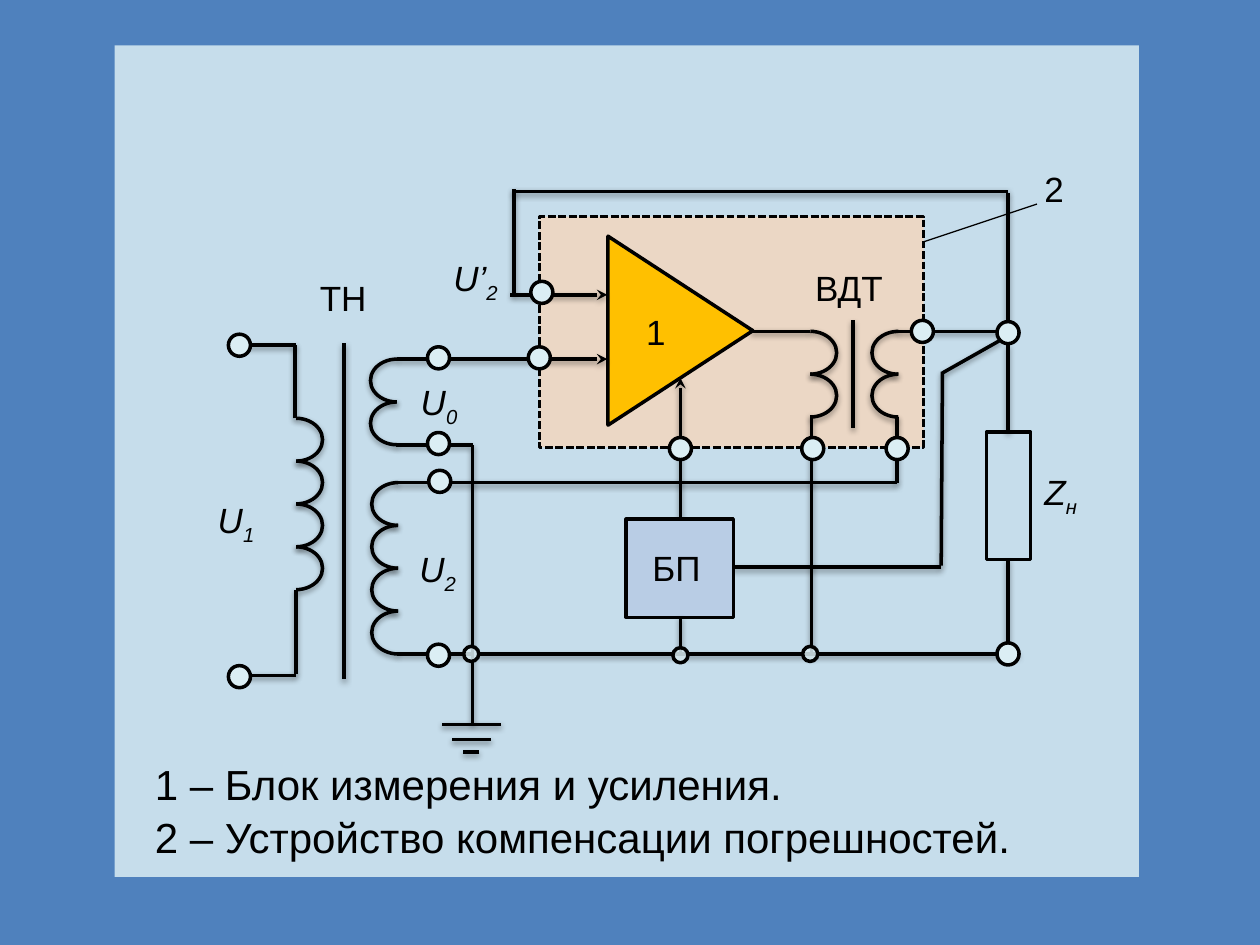
from dataclasses import dataclass
from typing import Any

from lxml.etree import SubElement
from pptx import Presentation
from pptx.dml.color import RGBColor
from pptx.enum.dml import MSO_LINE_DASH_STYLE as Dash
from pptx.enum.shapes import MSO_CONNECTOR_TYPE as Link, MSO_SHAPE as Kind
from pptx.enum.text import MSO_ANCHOR as Anchor, PP_ALIGN as Align
from pptx.oxml.ns import qn
from pptx.util import Inches, Pt

BLACK = RGBColor(0x00, 0x00, 0x00)
BLUE = RGBColor(0x4F, 0x81, 0xBD)
PALE = RGBColor(0xDB, 0xEE, 0xF4)
PEACH = RGBColor(0xFC, 0xD5, 0xB5)
AMBER = RGBColor(0xFF, 0xC0, 0x00)
STEEL = RGBColor(0xB9, 0xCD, 0xE5)

CELL = 0.1  # grid step in inches
TURN = 3.4  # height of one coil turn, in cells
BULGE = 4.2  # full width of one coil turn, in cells


def set_shadow(item, visible):
    """Give the item a soft drop shadow, or an empty effect list."""
    effects = SubElement(item._element.spPr, qn("a:effectLst"))
    if visible:
        shadow = SubElement(effects, qn("a:outerShdw"), blurRad="40000",
                            dist="20000", dir="5400000", rotWithShape="0")
        color = SubElement(shadow, qn("a:srgbClr"), val=str(BLACK))
        SubElement(color, qn("a:alpha"), val="38000")


@dataclass
class Region:
    """Part of the circuit; all lengths are cells from its top left corner."""
    shapes: Any
    left: float
    top: float

    def frame(self, x, y, width, height):
        return (Inches(self.left + x * CELL), Inches(self.top + y * CELL),
                Inches(width * CELL), Inches(height * CELL))

    def block(self, kind, place, fill=None, line=2, opacity=100):
        shape = self.shapes.add_shape(kind, *self.frame(*place))
        if fill is None:
            shape.fill.background()
        else:
            shape.fill.solid()
            shape.fill.fore_color.rgb = fill
            if opacity < 100:
                color = shape._element.spPr.find(".//" + qn("a:srgbClr"))
                SubElement(color, qn("a:alpha"), val=str(opacity * 1000))
        if line:
            shape.line.color.rgb = BLACK
            shape.line.width = Pt(line)
        else:
            shape.line.fill.background()
        return shape

    def plain(self, *args, **options):
        shape = self.block(*args, **options)
        shape.shadow.inherit = False
        return shape

    def wire(self, x1, y1, x2, y2, arrow=False, width=2, shadow=True):
        start, end = self.frame(x1, y1, 0, 0), self.frame(x2, y2, 0, 0)
        wire = self.shapes.add_connector(Link.STRAIGHT, *start[:2], *end[:2])
        wire.line.color.rgb = BLACK
        wire.line.width = Pt(width)
        if arrow:
            SubElement(wire.line._get_or_add_ln(), qn("a:tailEnd"), type="stealth")
        set_shadow(wire, shadow)

    def wires(self, *ends):
        for points in ends:
            self.wire(*points)

    def coil(self, x, y, turns, rotation):
        """Stack half circles on the axis x; y is the first turn's centre."""
        for turn in range(turns):
            place = (x - TURN / 2, y + turn * TURN - BULGE / 2, TURN, BULGE)
            arc = self.block(Kind.ARC, place)
            arc.adjustments[0] = 108.183
            arc.adjustments[1] = 0
            arc.rotation = rotation
            set_shadow(arc, True)

    def nodes(self, *centres, size=1.75, opacity=100):
        for x, y in centres:
            place = (x - size / 2, y - size / 2, size, size)
            self.plain(Kind.OVAL, place, PALE, opacity=opacity)

    def joints(self, *centres):
        self.nodes(*centres, size=1.2, opacity=85)

    def label(self, place, *lines, sub="", italic=False, size=20):
        box = self.shapes.add_textbox(*self.frame(*place))
        frame = box.text_frame
        frame.word_wrap = True
        frame.vertical_anchor = Anchor.TOP
        for index, line in enumerate(lines):
            para = frame.add_paragraph() if index else frame.paragraphs[0]
            para.alignment = Align.LEFT
            para.line_spacing = 1.05
            for text in filter(None, (line, sub)):
                span = para.add_run()
                span.text = text
                span.font.name = "Arial"
                span.font.size = Pt(size)
                span.font.italic = italic
                span.font.color.rgb = BLACK
                if text is sub:
                    span.font._element.set("baseline", "-25000")


def draw_panel(area):
    area.plain(Kind.RECTANGLE, (0, 0, 81.3, 66), PALE, line=0, opacity=85)
    area.label((2.2, 55.9, 77.8, 11.7), "1 – Блок измерения и усиления.",
               "2 – Устройство компенсации погрешностей.", size=24)


def draw_compensator(area):
    case = area.plain(Kind.RECTANGLE, (0, 0, 30.5, 18.3), PEACH, line=1.5, opacity=70)
    case.line.dash_style = Dash.SQUARE_DOT
    amplifier = area.plain(Kind.ISOSCELES_TRIANGLE, (3.7, 3.3, 15, 11.5), AMBER)
    amplifier.rotation = 90
    # Feedback loop, booster transformer and return wires
    area.wires((37.2, -2, -2.1, -2), (-2, -2.2, -2, 6.1),
               (21.5, 9.1, 16.8, 9.1), (24.9, 8.2, 24.9, 16.8),
               (37.1, 9.1, 28.4, 9.1), (28.4, 21.1, 28.4, 15.9),
               (28.4, 21.1, -11.4, 21.1), (21.6, 34.9, 21.6, 15.7))
    # Amplifier inputs
    for ends in ((-11.3, 11.3, 5.4, 11.3), (-2.3, 6.2, 5.4, 6.2),
                 (11.2, 24, 11.2, 12.8)):
        area.wire(*ends, arrow=True)
    area.coil(21.5, 10.8, 2, 90)
    area.coil(28.5, 10.8, 2, 270)
    area.nodes((0.2, 6), (0, 11.2), (30.4, 9.1),
               (11.2, 18.4), (21.7, 18.4), (28.4, 18.4))
    area.wire(30.5, 2, 39.5, -1, width=0.75, shadow=False)
    area.label((20.9, 3.3, 7.8, 3.7), "ВДТ")
    area.label((7.5, 6.8, 6.8, 4.2), "1")
    area.label((39.1, -4.6, 6.5, 4.5), "2")
    area.label((-7.8, 2.5, 6.6, 5), "U’", sub="2", italic=True)


def draw_load(area):
    area.wires((6, 1.5, 6, -9.7), (6, 2.3, 6, 9.3), (6, 19.4, 6, 26.1),
               (6.8, 26.9, -36.1, 26.9), (0.7, 19.9, 0.8, 4.5),
               (0.7, 20, -15.9, 20), (0.8, 4.6, 5.4, 2))
    area.plain(Kind.RECTANGLE, (4.3, 9.3, 3.5, 10.1))
    area.nodes((6, 1.4), (6, 26.9))
    area.label((7.9, 11.7, 5.8, 4.3), "Z", sub="н", italic=True)


def draw_supply(area):
    area.plain(Kind.RECTANGLE, (0, 0, 8.5, 7.8), STEEL)
    area.wire(4.3, 10.7, 4.3, 7.7)
    area.joints((4.3, 10.8), (14.6, 10.7))
    area.label((1.1, 1.5, 6.6, 3.2), "БП")


def draw_transformer(area):
    # Primary leads, core, secondary leads
    area.wires((7.4, 12.2, 7.4, 6.4), (7.5, 25.8, 7.5, 32.5),
               (2.7, 6.4, 7.5, 6.4), (2.7, 32.6, 7.5, 32.6),
               (11.3, 32.9, 11.3, 6.2), (21.5, 14.3, 15.4, 14.3),
               (21.6, 30.9, 15.5, 30.9), (21.5, 36.4, 21.5, 14.3))
    # Ground bars
    for y, half in ((36.5, 2.35), (37.7, 1.55), (38.7, 0.65)):
        area.wire(21.4 + half, y, 21.4 - half, y)
    area.coil(7.5, 13.9, 4, 90)
    area.coil(15.5, 9.2, 2, 270)
    area.coil(15.6, 19, 4, 270)
    area.nodes((3, 6.4), (3, 32.7), (18.8, 7.4), (18.8, 14.2),
               (18.9, 17.2), (18.8, 31))
    area.joints((21.4, 30.9))
    area.label((8.4, 0.3, 5.9, 5.5), "ТН")
    for place, index in (((16.4, 8.5, 7.5, 4.8), "0"),
                         ((0.3, 17.9, 6.3, 4.6), "1"),
                         ((16.3, 21.8, 5.6, 5.5), "2")):
        area.label(place, "U", sub=index, italic=True)


def main():
    deck = Presentation()
    deck.slide_width, deck.slide_height = Inches(10), Inches(7.5)
    page = deck.slides.add_slide(deck.slide_layouts[6])
    page.background.fill.solid()
    page.background.fill.fore_color.rgb = BLUE
    for draw, left, top in ((draw_panel, 0.91, 0.36),
                            (draw_compensator, 4.28, 1.72),
                            (draw_load, 7.4, 2.5),
                            (draw_supply, 4.97, 4.12),
                            (draw_transformer, 1.6, 2.1)):
        draw(Region(page.shapes, left, top))
    deck.save("out.pptx")


if __name__ == "__main__":
    main()
